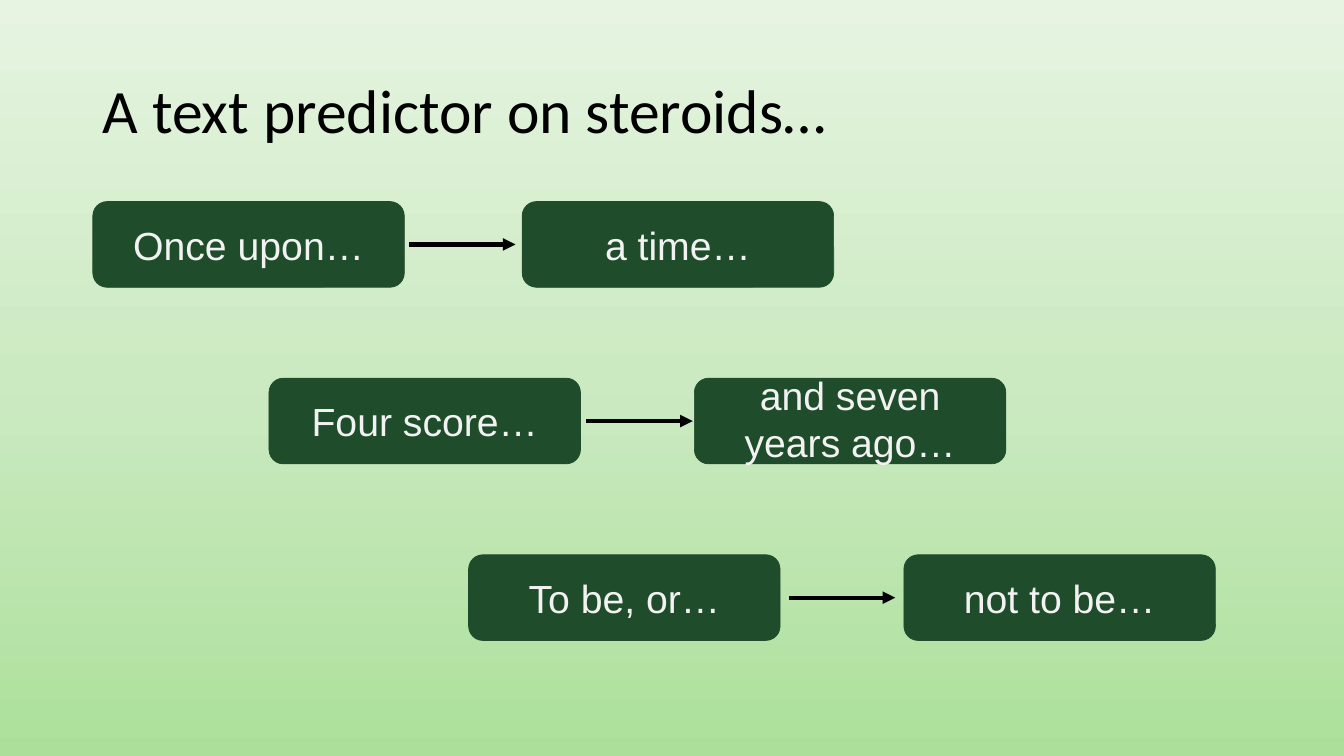
import copy
import dataclasses
import pptx
import pptx.dml.color
import pptx.enum.shapes
import pptx.enum.text
import pptx.oxml
import pptx.oxml.ns
import pptx.util

Cm = pptx.util.Cm
Pt = pptx.util.Pt
Shape = pptx.enum.shapes.MSO_SHAPE
Align = pptx.enum.text.PP_ALIGN
NS = 'xmlns:a="http://schemas.openxmlformats.org/drawingml/2006/main"'


def rgb(code):
    return pptx.dml.color.RGBColor.from_string(code)


@dataclasses.dataclass
class Theme:
    back: tuple = ("ACE09A", "CCEAC2", "E6F4E1")
    box: str = "1F4C2A"
    light: str = "F2F2F2"
    dark: str = "000000"
    head: str = "Calibri"
    body: str = "Arial"
    large: int = 44
    small: int = 28


class Board:
    def __init__(self, deck, theme):
        self.theme = theme
        self.wide, self.high = deck.slide_width, deck.slide_height
        self.slide = deck.slides.add_slide(deck.slide_layouts[6])

    def label(self, shape, text, font, size, color, align):
        frame = shape.text_frame
        frame.word_wrap = True
        frame.vertical_anchor = pptx.enum.text.MSO_ANCHOR.MIDDLE
        frame.text = text
        para = frame.paragraphs[0]
        para.alignment = align
        face = para.runs[0].font
        face.name, face.size = font, Pt(size)
        face.color.rgb = rgb(color)
        return frame

    def back(self):
        pane = self.slide.shapes.add_shape(Shape.RECTANGLE, 0, 0, self.wide, self.high)
        pane.shadow.inherit = False
        pane.line.fill.background()
        fill = pane.fill
        fill.gradient()
        fill.gradient_angle = 90
        stops = pane.element.spPr.find(".//" + pptx.oxml.ns.qn("a:gsLst"))
        stops.insert(1, copy.deepcopy(stops[0]))
        stops[1].set("pos", "50000")
        for stop, color in zip(fill.gradient_stops, self.theme.back):
            stop.color.rgb = rgb(color)

    def title(self, text):
        look = self.theme
        box = self.slide.shapes.add_textbox(Cm(2.34), Cm(1.02), Cm(29.21), Cm(3.68))
        frame = self.label(box, text, look.head, look.large, look.dark, Align.LEFT)
        frame.paragraphs[0].line_spacing = 0.9

    def card(self, text, left, top, wide, high):
        look = self.theme
        card = self.slide.shapes.add_shape(
            Shape.ROUNDED_RECTANGLE, Cm(left), Cm(top), Cm(wide), Cm(high))
        card.shadow.inherit = False
        card.fill.solid()
        card.fill.fore_color.rgb = rgb(look.box)
        card.line.color.rgb = rgb(look.box)
        card.line.width = Pt(0.5)
        return self.label(card, text, look.body, look.small, look.light, Align.CENTER)

    def arrow(self, left, top, span):
        line = self.slide.shapes.add_connector(
            pptx.enum.shapes.MSO_CONNECTOR.STRAIGHT,
            Cm(left), Cm(top), Cm(left + span), Cm(top))
        line.line.color.rgb = rgb(self.theme.dark)
        line.line.width = Pt(3)
        props = line.element.spPr
        props.get_or_add_ln().append(
            pptx.oxml.parse_xml(f'<a:tailEnd {NS} type="triangle"/>'))
        props.append(pptx.oxml.parse_xml(f"<a:effectLst {NS}/>"))


def main():
    deck = pptx.Presentation()
    deck.slide_width, deck.slide_height = Cm(33.87), Cm(19.05)
    board = Board(deck, Theme())
    board.back()
    board.title("A text predictor on steroids…")

    wide, high, span = 7.85, 2.16, 2.68
    rows = [
        ("Once upon…", 2.34, 10.31, "a time…", 13.16),
        ("Four score…", 6.78, 14.78, "and seven years ago…", 17.5),
        ("To be, or…", 11.81, 19.88, "not to be…", 22.78),
    ]
    ends = []
    for row, (start, left, tip, end, right) in enumerate(rows):
        top = 5.08 + 4.45 * row
        board.card(start, left, top, wide, high)
        ends.append(board.card(end, right, top, wide, high))
        board.arrow(tip, top + high / 2, span)
    ends[1].margin_top = 0

    deck.save("out.pptx")


if __name__ == "__main__":
    main()
